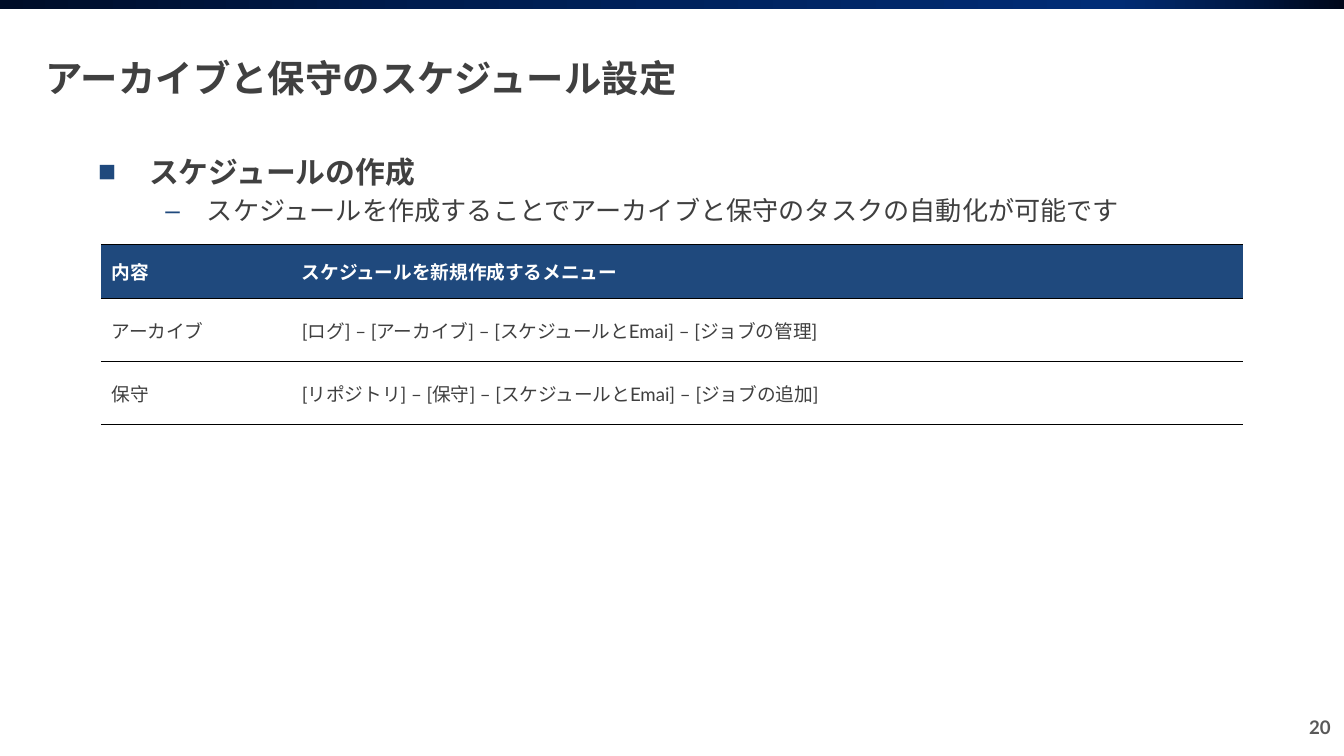
from lxml import etree
from pptx import Presentation
from pptx import util as u
from pptx.dml.color import RGBColor
from pptx.enum import shapes, text
from pptx.oxml.ns import qn

WIDTH = 10
HEIGHT = WIDTH * 9 / 16
NAVY, DARK, WHITE, BLACK = "1F497D", "3F3F3F", "FFFFFF", "000000"
HEADING = "404040"
LATIN, JAPANESE, BULLET = "Lato", "Noto Sans CJK JP", "Arial"
BAND_STOPS = [(0, "000D28"), (32, "001C4E"), (83, "012D76"), (100, "00071A")]
SCHEDULES = [
    ("内容", "スケジュールを新規作成するメニュー"),
    ("アーカイブ", "[ログ] – [アーカイブ] – [スケジュールとEmai] – [ジョブの管理]"),
    ("保守", "[リポジトリ] – [保守] – [スケジュールとEmai] – [ジョブの追加]"),
]
COLUMN_SHARES = [1 / 6, 5 / 6]
ROW_HEIGHTS = [0.4, 0.47, 0.47]
RULE_WIDTHS = [0.5, 1, 0.5, 1]


def color(value):
    return RGBColor.from_string(value)


def inches(box):
    return [u.Inches(length) for length in box]


def add_node(parent, tag, **attributes):
    return etree.SubElement(parent, qn(tag), attributes)


def add_color(parent, value):
    add_node(parent, "a:srgbClr", val=value)


def write(para, words, size=10, fill=DARK, bold=False, font=LATIN,
          align=text.PP_ALIGN.LEFT):
    para.alignment = align
    span = para.add_run()
    span.text = words
    span.font.size = u.Pt(size)
    span.font.bold = bold
    span.font.name = font
    span.font.color.rgb = color(fill)
    add_node(span.font._element, "a:ea", typeface=JAPANESE)


def set_frame(frame, anchor):
    frame.word_wrap = True
    frame.auto_size = text.MSO_AUTO_SIZE.NONE
    frame.vertical_anchor = anchor


def place(shape, box):
    shape.left, shape.top, shape.width, shape.height = inches(box)


def add_bullet(para, mark, margin, hanging, before=0):
    para.space_before = u.Pt(before)
    properties = para._p.get_or_add_pPr()
    properties.set("marL", str(u.Inches(margin)))
    properties.set("indent", str(-u.Inches(hanging)))
    add_color(add_node(properties, "a:buClr"), NAVY)
    add_node(properties, "a:buFont", typeface=BULLET)
    add_node(properties, "a:buChar", char=mark)


def add_band(page, box):
    band = page.shapes.add_shape(shapes.MSO_SHAPE.RECTANGLE, *inches(box))
    band.shadow.inherit = False
    band.line.fill.background()
    band.fill.gradient()
    band.fill.gradient_angle = 0
    stops = band._element.spPr.find(".//" + qn("a:gsLst"))
    for stop in list(stops):
        stops.remove(stop)
    for position, value in BAND_STOPS:
        add_color(add_node(stops, "a:gs", pos=str(position * 1000)), value)


def fill_title(page, box, words):
    title = page.shapes.title
    place(title, box)
    set_frame(title.text_frame, text.MSO_ANCHOR.MIDDLE)
    write(title.text_frame.paragraphs[0], words, size=20, fill=HEADING, bold=True)


def fill_body(page, box, heading, detail):
    body = page.placeholders[1]
    place(body, box)
    frame = body.text_frame
    set_frame(frame, text.MSO_ANCHOR.TOP)
    para = frame.paragraphs[0]
    write(para, heading, size=16, fill=HEADING, bold=True, font=JAPANESE)
    add_bullet(para, "■", 0.38, 0.38)
    para = frame.add_paragraph()
    para.level = 1
    write(para, detail, size=14, font=JAPANESE)
    add_bullet(para, "–", 0.81, 0.31, before=2.8)


def add_rules(cell, row):
    properties = cell._tc.get_or_add_tcPr()
    for tag in ("a:lnL", "a:lnR"):
        add_node(add_node(properties, tag, w="0"), "a:noFill")
    for tag, width in zip(("a:lnT", "a:lnB"), RULE_WIDTHS[row:row + 2]):
        rule = add_node(properties, tag, w=str(u.Pt(width)))
        add_color(add_node(rule, "a:solidFill"), BLACK)


def add_schedule_table(page, box, rows):
    frame = page.shapes.add_table(len(rows), len(rows[0]), *inches(box))
    table = frame.table
    table.first_row = table.horz_banding = False
    for column, share in zip(table.columns, COLUMN_SHARES):
        column.width = u.Inches(box[2] * share)
    for row, height in zip(table.rows, ROW_HEIGHTS):
        row.height = u.Inches(height)
    for row, values in enumerate(rows):
        header = row == 0
        for column, words in enumerate(values):
            cell = table.cell(row, column)
            cell.vertical_anchor = text.MSO_ANCHOR.MIDDLE
            cell.margin_left = cell.margin_right = u.Inches(0.08)
            cell.margin_top = cell.margin_bottom = u.Inches(0.1)
            add_rules(cell, row)
            cell.fill.solid()
            cell.fill.fore_color.rgb = color(NAVY if header else WHITE)
            write(cell.text_frame.paragraphs[0], words,
                  fill=WHITE if header else DARK, bold=header)


def add_page_number(page, box, number):
    frame = page.shapes.add_textbox(*inches(box)).text_frame
    set_frame(frame, text.MSO_ANCHOR.MIDDLE)
    write(frame.paragraphs[0], number, fill="595959", bold=True,
          align=text.PP_ALIGN.RIGHT)


def main():
    deck = Presentation()
    deck.slide_width, deck.slide_height = inches((WIDTH, HEIGHT))
    page = deck.slides.add_slide(deck.slide_layouts[1])
    add_band(page, (0, 0, WIDTH, 0.07))
    fill_title(page, (0.24, 0.23, 9.53, 0.7), "アーカイブと保守のスケジュール設定")
    fill_body(page, (0.63, 1.09, 9, 4.01), "スケジュールの作成",
              "スケジュールを作成することでアーカイブと保守のタスクの自動化が可能です")
    add_schedule_table(page, (0.75, 1.82, 8.5, sum(ROW_HEIGHTS)), SCHEDULES)
    add_page_number(page, (WIDTH - 0.6, 5.26, 0.6, 0.3), "20")
    deck.save("out.pptx")


if __name__ == "__main__":
    main()
